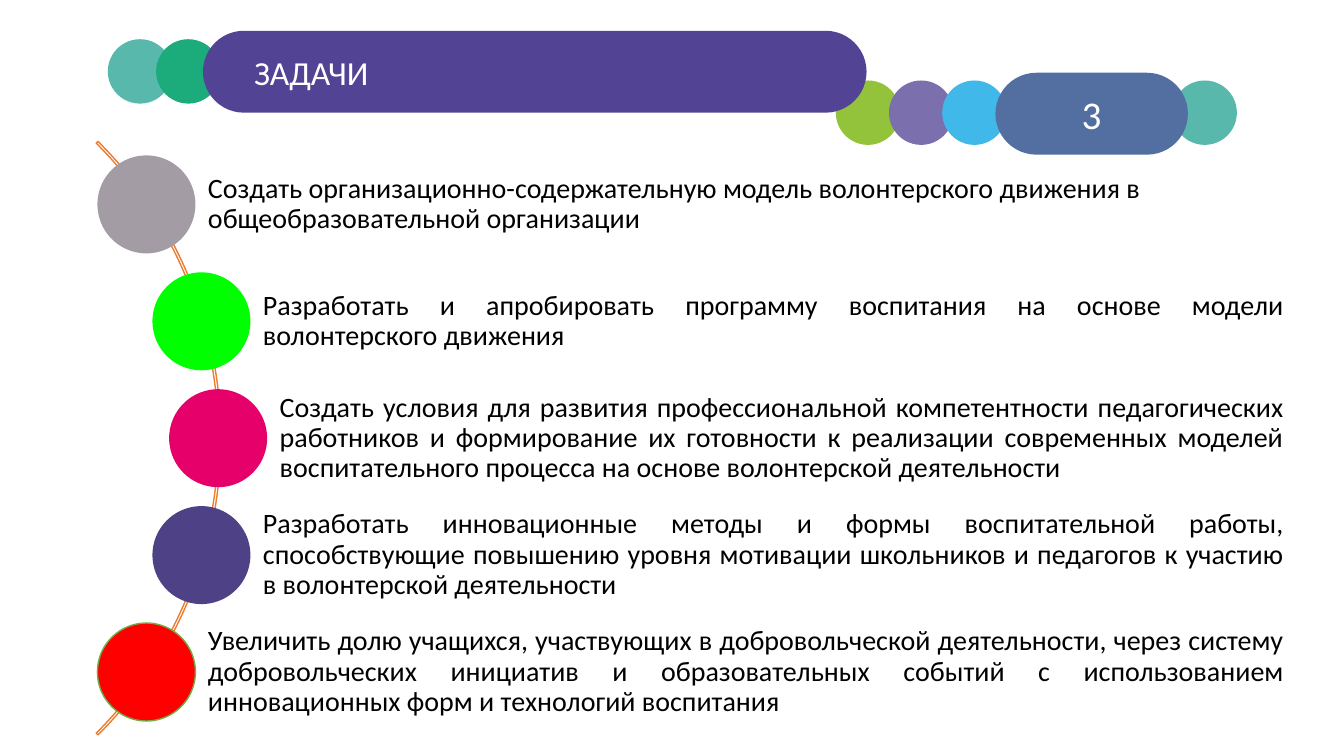
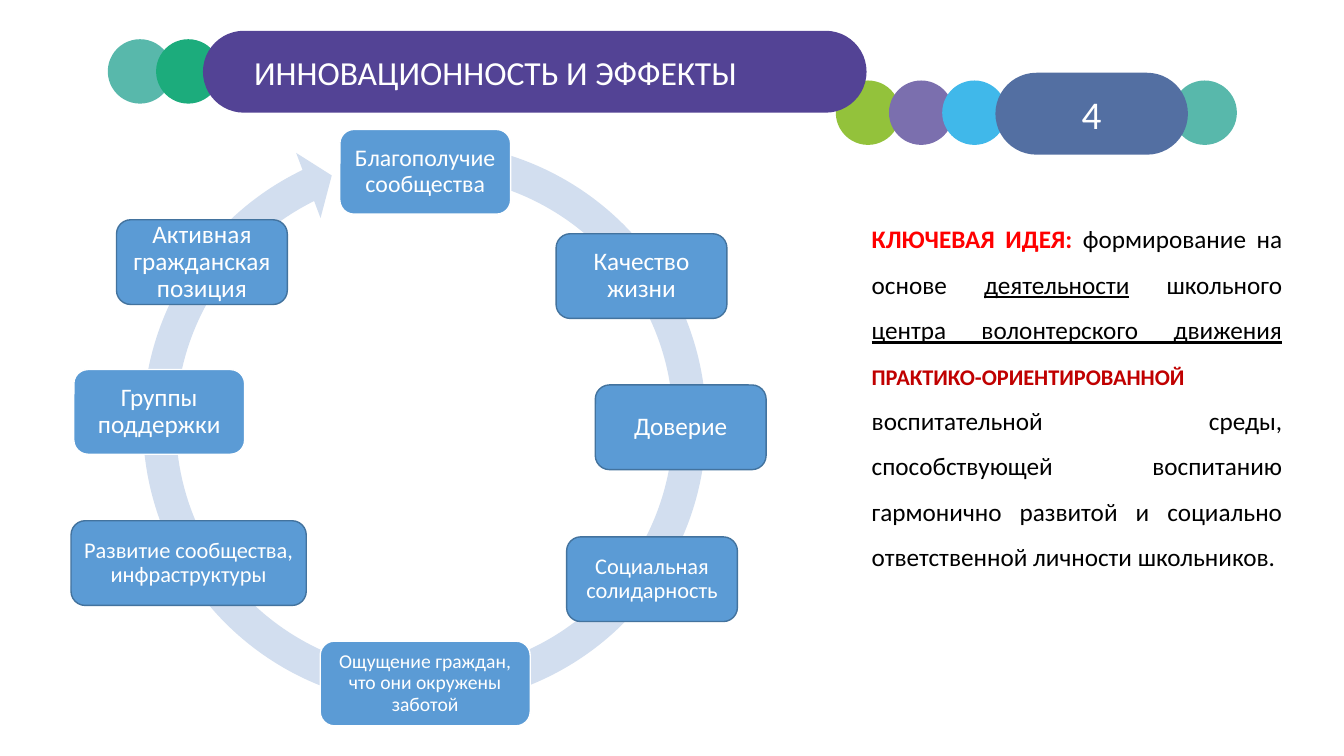
from math import sqrt
from typing import NamedTuple

from pptx import Presentation
from pptx.dml.color import RGBColor
from pptx.enum.shapes import MSO_SHAPE
from pptx.enum.text import MSO_ANCHOR, PP_ALIGN
from pptx.util import Pt

FONT = "Calibri"
WHITE = RGBColor(0xFF, 0xFF, 0xFF)
BLACK = RGBColor(0, 0, 0)
TEAL = RGBColor(0x58, 0xB8, 0xAB)
GREEN = RGBColor(0x1C, 0xAC, 0x7C)
LIME = RGBColor(0x93, 0xC2, 0x3B)
LILAC = RGBColor(0x7B, 0x6F, 0xAE)
SKY = RGBColor(0x40, 0xB8, 0xEA)
STEEL = RGBColor(0x53, 0x6F, 0xA2)
VIOLET = RGBColor(0x53, 0x43, 0x95)
ORANGE = RGBColor(0xED, 0x7D, 0x31)
GREY = RGBColor(0xA3, 0x9C, 0xA5)
BRIGHT_GREEN = RGBColor(0, 0xFF, 0)
MAGENTA = RGBColor(0xE5, 0x00, 0x6A)
INDIGO = RGBColor(0x4F, 0x41, 0x86)
RED = RGBColor(0xFF, 0, 0)
DARK_RED = RGBColor(0xC0, 0, 0)
LEAF = RGBColor(0x70, 0xAD, 0x47)
BLUE = RGBColor(0x5B, 0x9B, 0xD5)
NAVY = RGBColor(0x43, 0x73, 0x9E)
PALE_BLUE = RGBColor(0xD2, 0xDE, 0xEF)


class Box(NamedTuple):
    """A rectangle in points."""
    left: float
    top: float
    width: float
    height: float

    def lengths(self):
        """Return the four sides as Pt lengths."""
        return [Pt(value) for value in self]


HEADER = Box(77, 22, 814, 89)
GOALS_BOX = Box(70, 101, 851.5, 424)
RING_BOX = Box(89, 88.5, 428.5, 428.5)
IDEA_BOX = Box(579.5, 145.5, 343.5, 269)

HEADER_CIRCLES = [(0, 6, TEAL), (34.5, 6, GREEN), (520, 35.5, LIME),
                  (558, 35.5, LILAC), (596, 35.5, SKY), (760.5, 35.5, TEAL)]

GOALS = [
    ("Создать организационно-содержательную модель волонтерского движения "
     "в общеобразовательной организации", GREY, None, PP_ALIGN.LEFT),
    ("Разработать и апробировать программу воспитания на основе модели "
     "волонтерского движения", BRIGHT_GREEN, None, PP_ALIGN.JUSTIFY),
    ("Создать условия для развития профессиональной компетентности "
     "педагогических работников и формирование их готовности к реализации "
     "современных моделей воспитательного процесса на основе волонтерской "
     "деятельности", MAGENTA, None, PP_ALIGN.JUSTIFY),
    ("Разработать инновационные методы и формы воспитательной работы, "
     "способствующие повышению уровня мотивации школьников и педагогов к "
     "участию в волонтерской деятельности", INDIGO, None, PP_ALIGN.JUSTIFY),
    ("Увеличить долю учащихся, участвующих в добровольческой деятельности, "
     "через систему добровольческих инициатив и образовательных событий с "
     "использованием инновационных форм и технологий воспитания",
     RED, LEAF, PP_ALIGN.JUSTIFY),
]

EFFECTS = [
    ("Благополучие сообщества", 0.5, -180, 122, 17, WHITE),
    ("Качество жизни", 155, -105.5, 122, 18, NAVY),
    ("Доверие", 183, 2.5, 122, 18, NAVY),
    ("Социальная солидарность", 162.5, 111, 122, 16, NAVY),
    ("Ощущение граждан, что они окружены заботой", 0.5, 185.5, 150, 14, WHITE),
    ("Развитие сообщества, инфраструктуры", -168.5, 99.5, 168, 16, NAVY),
    ("Группы поддержки", -189.5, -8.5, 122, 18, WHITE),
    ("Активная гражданская позиция", -159, -115.5, 122, 18, NAVY),
]

IDEA_RUNS = [
    ("КЛЮЧЕВАЯ ИДЕЯ:", 18, RED, True, False),
    (" формирование на основе ", 18, BLACK, False, False),
    ("деятельности", 18, BLACK, False, True),
    (" школьного ", 18, BLACK, False, False),
    ("центра волонтерского движения", 18, BLACK, False, True),
    (" ", 18, BLACK, False, False),
    ("ПРАКТИКО-ОРИЕНТИРОВАННОЙ", 16, DARK_RED, True, False),
    (" воспитательной среды, способствующей воспитанию гармонично развитой "
     "и социально ответственной личности школьников.",
     18, BLACK, False, False),
]


def style_run(run, size, color, bold=False, underline=False):
    """Set the font of one run."""
    font = run.font
    font.name, font.size, font.bold = FONT, Pt(size), bold
    font.underline = underline
    font.color.rgb = color


def add_figure(slide, kind, box, fill=None, line=None, adjustments=()):
    """Add a preset shape without shadow and return it."""
    shape = slide.shapes.add_shape(kind, *box.lengths())
    shape.shadow.inherit = False
    for index, value in enumerate(adjustments):
        shape.adjustments[index] = value
    if fill is None:
        shape.fill.background()
    else:
        shape.fill.solid()
        shape.fill.fore_color.rgb = fill
    if line is None:
        shape.line.fill.background()
    else:
        shape.line.color.rgb = line
        shape.line.width = Pt(1)
    return shape


def write_text(shape, text, size, color, align, margins, spacing=1.0):
    """Write one vertically centred paragraph into a shape."""
    frame = shape.text_frame
    frame.word_wrap = True
    frame.vertical_anchor = MSO_ANCHOR.MIDDLE
    (frame.margin_left, frame.margin_top,
     frame.margin_right, frame.margin_bottom) = [Pt(m) for m in margins]
    frame.text = text
    paragraph = frame.paragraphs[0]
    paragraph.alignment = align
    paragraph.line_spacing = spacing
    style_run(paragraph.runs[0], size, color)


def add_header(slide, box, title, number):
    """Draw the circles, the title pill and the number pill."""
    for left, top, color in HEADER_CIRCLES:
        add_figure(slide, MSO_SHAPE.OVAL,
                   Box(box.left + left, box.top + top, 46, 46), color)
    pills = [(634, 30, 137.5, STEEL, number, 28, PP_ALIGN.CENTER, 7),
             (68, 0, 474, VIOLET, title, 24, PP_ALIGN.LEFT, 28)]
    for left, top, width, color, text, size, align, margin in pills:
        pill = add_figure(slide, MSO_SHAPE.ROUNDED_RECTANGLE,
                          Box(box.left + left, box.top + top, width, 58.5),
                          color, adjustments=[0.5])
        write_text(pill, text, size, WHITE, align, (margin, 4, 7, 4))


def add_goals(slide, box):
    """Place the goals along a quarter arc at the left of the box."""
    radius = box.height / sqrt(2)
    center_x = box.left - box.height / 2
    center_y = box.top + box.height / 2
    add_figure(slide, MSO_SHAPE.BLOCK_ARC,
               Box(center_x - radius, center_y - radius, 2 * radius, 2 * radius),
               line=ORANGE, adjustments=[189, 27, 0.003])
    diameter, pitch, text_height = 70, 83.5, 55.5
    for index, (text, fill, line, align) in enumerate(GOALS):
        offset = (index - (len(GOALS) - 1) / 2) * pitch
        x = center_x + sqrt((radius - 2) ** 2 - offset ** 2)
        y = center_y + offset
        text_box = Box(x, y - text_height / 2,
                       box.left + box.width - x, text_height)
        label = slide.shapes.add_textbox(*text_box.lengths())
        write_text(label, text, 20, BLACK, align, (44, 4.4, 4.4, 4.4), 0.9)
        add_figure(slide, MSO_SHAPE.OVAL,
                   Box(x - diameter / 2, y - diameter / 2, diameter, diameter),
                   fill, line)


def add_effects_ring(slide, box):
    """Draw the circular arrow and the effects around its centre."""
    add_figure(slide, MSO_SHAPE.CIRCULAR_ARROW, box, PALE_BLUE,
               adjustments=[0.055, 3.307, 146.406, 168.791, 0.058])
    center_x = box.left + box.width / 2
    center_y = box.top + box.height / 2
    height = 60.5
    for text, dx, dy, width, size, line in EFFECTS:
        node = add_figure(slide, MSO_SHAPE.ROUNDED_RECTANGLE,
                          Box(center_x + dx - width / 2,
                              center_y + dy - height / 2, width, height),
                          BLUE, line)
        write_text(node, text, size, WHITE, PP_ALIGN.CENTER, (5, 5, 5, 5), 0.9)


def add_key_idea(slide, box):
    """Write the key idea as one justified, indented paragraph."""
    frame = slide.shapes.add_textbox(*box.lengths()).text_frame
    frame.word_wrap = True
    frame.margin_left = Pt(43.2)
    paragraph = frame.paragraphs[0]
    paragraph.alignment = PP_ALIGN.JUSTIFY
    paragraph.line_spacing = 1.5
    for text, *style in IDEA_RUNS:
        run = paragraph.add_run()
        run.text = text
        style_run(run, *style)


def add_slide(presentation, title, number):
    """Add a blank slide with the shared header."""
    slide = presentation.slides.add_slide(presentation.slide_layouts[6])
    add_header(slide, HEADER, title, number)
    return slide


def main():
    """Build and save the presentation."""
    presentation = Presentation()
    presentation.slide_width, presentation.slide_height = Pt(960), Pt(540)
    add_goals(add_slide(presentation, "ЗАДАЧИ", "3"), GOALS_BOX)
    slide = add_slide(presentation, "ИННОВАЦИОННОСТЬ И ЭФФЕКТЫ", "4")
    add_key_idea(slide, IDEA_BOX)
    add_effects_ring(slide, RING_BOX)
    presentation.save("out.pptx")


if __name__ == "__main__":
    main()
